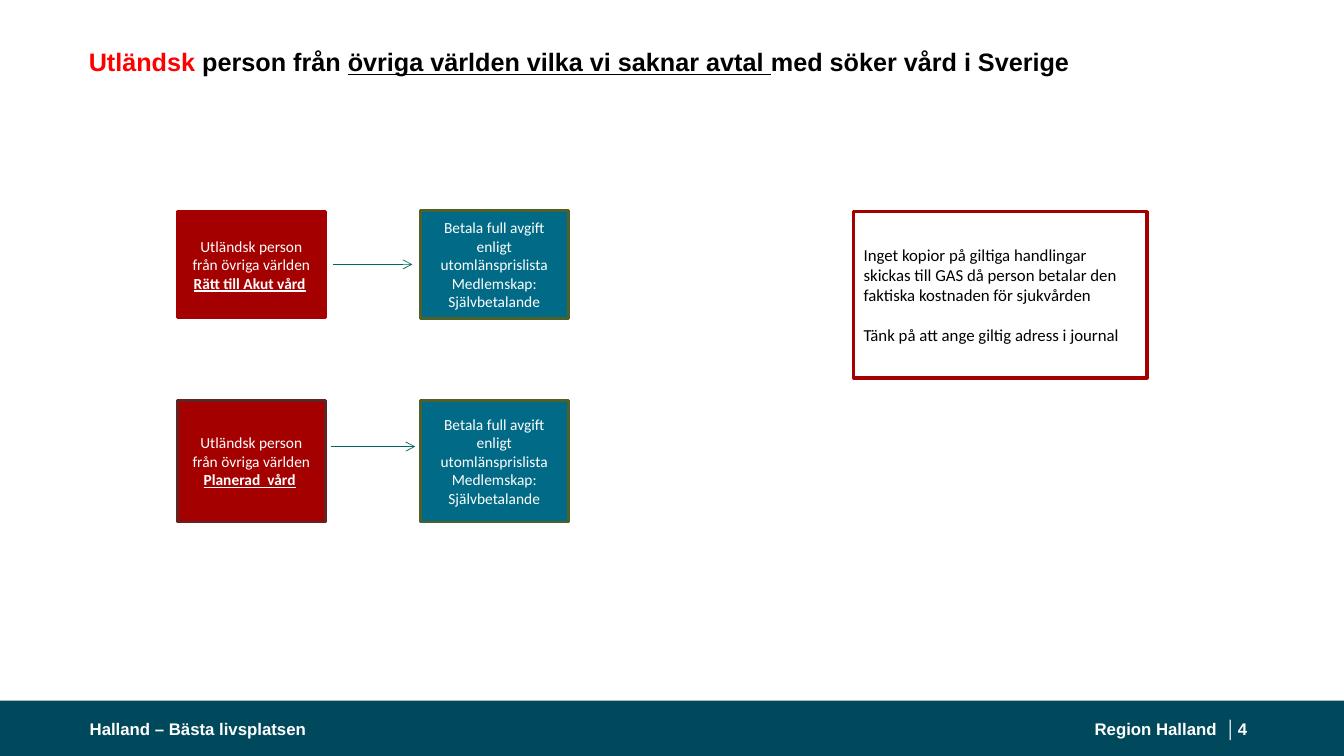
from lxml import etree
from pptx import Presentation
from pptx import util as u
from pptx.dml.color import RGBColor
from pptx.enum import shapes, text
from pptx.oxml.ns import qn

Pt = u.Pt
WHITE = RGBColor(0xFF, 0xFF, 0xFF)
BLACK = RGBColor(0, 0, 0)
BRIGHT_RED = RGBColor(0xFF, 0, 0)
DARK_RED = RGBColor(0xA4, 0, 0)
BROWN = RGBColor(0x62, 0x24, 0x23)
BLUE = RGBColor(0, 0x6A, 0x87)
OLIVE = RGBColor(0x4E, 0x61, 0x28)
GREEN = RGBColor(0, 0x68, 0x58)
PETROL = RGBColor(0, 0x49, 0x5D)
LEFT, CENTER, RIGHT = (text.PP_ALIGN.LEFT, text.PP_ALIGN.CENTER,
                       text.PP_ALIGN.RIGHT)

# Content: title runs are (text, colour, underlined)
TITLE = [("Utländsk", BRIGHT_RED, False),
         (" person från ", BLACK, False),
         ("övriga världen vilka vi saknar avtal ", BLACK, True),
         ("med söker vård i Sverige", BLACK, False)]
PATIENT = "Utländsk person från övriga världen"
PAYMENT = ["Betala full avgift enligt utomlänsprislista",
           "Medlemskap: Självbetalande"]
# Each row: care type, patient border, patient (top, height),
# payment (top, height), arrow (left, right, y)
ROWS = [
    ("Rätt till Akut vård", DARK_RED, (151.2, 75.6), (150.5, 77),
     (237.6, 294.5, 188.9)),
    ("Planerad  vård", BROWN, (285.8, 87.1), (285.8, 87.1),
     (236.2, 296.6, 319)),
]
NOTE = ["Inget kopior på giltiga handlingar skickas till GAS då person "
        "betalar den faktiska kostnaden för sjukvården",
        "Tänk på att ange giltig adress i journal"]
# Footer: text, left, width, alignment
FOOTER = [("Region Halland  │", 770.4, 113, RIGHT),
          ("Halland – Bästa livsplatsen", 64.1, 324, LEFT),
          ("4", 884.2, 17.3, LEFT)]
PATIENT_X, PAYMENT_X, BOX_W = 126.7, 300.2, 105.8

prs = Presentation()
prs.slide_width, prs.slide_height = Pt(960), Pt(540)
slide = prs.slides.add_slide(prs.slide_layouts[5])


def add_run(paragraph, words, size, color, font="Calibri", bold=False,
            underline=False):
    run = paragraph.add_run()
    run.text = words
    run.font.name, run.font.size = font, Pt(size)
    run.font.bold, run.font.underline = bold, underline
    run.font.color.rgb = color


def add_box(left, top, width, height, fill, border=None, weight=2):
    box = slide.shapes.add_shape(shapes.MSO_SHAPE.RECTANGLE, Pt(left),
                                 Pt(top), Pt(width), Pt(height))
    box.shadow.inherit = False
    box.fill.solid()
    box.fill.fore_color.rgb = fill
    if border is None:
        box.line.fill.background()
    else:
        box.line.color.rgb = border
        box.line.width = Pt(weight)
    box.text_frame.word_wrap = True
    box.text_frame.vertical_anchor = text.MSO_ANCHOR.MIDDLE
    return box.text_frame


def clear_insets(frame):
    frame.margin_left = frame.margin_right = 0
    frame.margin_top = frame.margin_bottom = 0
    frame.vertical_anchor = text.MSO_ANCHOR.MIDDLE
    frame.word_wrap = True


def add_paragraphs(frame, lines, size, color, align, gap=0):
    for i, line in enumerate(lines):
        paragraph = frame.paragraphs[0] if i == 0 else frame.add_paragraph()
        paragraph.alignment = align
        if i and gap:
            paragraph.space_before = Pt(gap)
        add_run(paragraph, line, size, color)


def add_arrow(left, right, y):
    arrow = slide.shapes.add_connector(shapes.MSO_CONNECTOR.STRAIGHT,
                                       Pt(left), Pt(y), Pt(right), Pt(y))
    arrow.line.color.rgb = GREEN
    arrow.line.width = Pt(0.5)
    etree.SubElement(arrow.line._get_or_add_ln(), qn("a:tailEnd"),
                     type="arrow")
    etree.SubElement(arrow._element.spPr, qn("a:effectLst"))


# Title
title = slide.shapes.title
title.left, title.top, title.width, title.height = (
    Pt(63.4), Pt(6.5), Pt(833.8), Pt(77.8))
clear_insets(title.text_frame)
title.text_frame.auto_size = text.MSO_AUTO_SIZE.NONE
heading = title.text_frame.paragraphs[0]
heading.alignment, heading.line_spacing = LEFT, 0.9
for words, color, underlined in TITLE:
    add_run(heading, words, 18, color, "Arial", True, underlined)

# Footer band
add_box(0, 500.4, 960, 39.6, PETROL)
for words, left, width, align in FOOTER:
    label = slide.shapes.add_textbox(Pt(left), Pt(508.3), Pt(width), Pt(25.2))
    clear_insets(label.text_frame)
    label.text_frame.paragraphs[0].alignment = align
    add_run(label.text_frame.paragraphs[0], words, 12, WHITE, "Arial", True)

# Patient to payment flows
for care, border, (top, height), (pay_top, pay_height), arrow_ends in ROWS:
    patient = add_box(PATIENT_X, top, BOX_W, height, DARK_RED,
                      border).paragraphs[0]
    patient.alignment = CENTER
    add_run(patient, PATIENT, 11, WHITE)
    patient.add_line_break()
    add_run(patient, care, 11, WHITE, bold=True, underline=True)
    add_run(patient, " ", 11, WHITE)
    payment = add_box(PAYMENT_X, pay_top, BOX_W, pay_height, BLUE, OLIVE)
    add_paragraphs(payment, PAYMENT, 11, WHITE, CENTER)
    add_arrow(*arrow_ends)

# Note
note = add_box(609.8, 151.2, 209.5, 118.8, WHITE, DARK_RED, 2.25)
add_paragraphs(note, NOTE, 12, BLACK, LEFT, gap=14.5)

prs.save("out.pptx")
